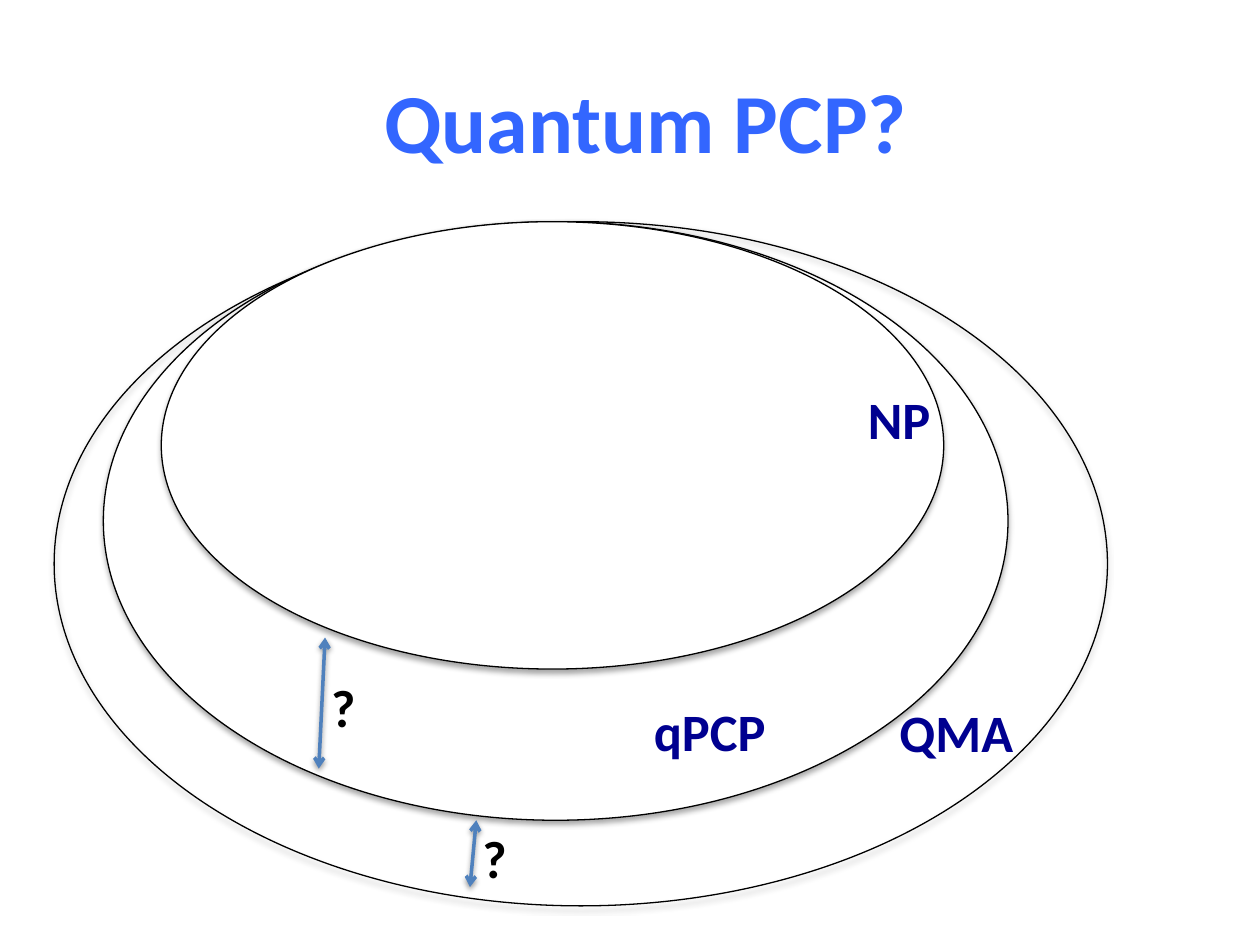
import pptx
import pptx.util
import pptx.dml.color
import pptx.enum.shapes
import pptx.enum.text
import pptx.oxml.ns
from lxml import etree

Inches, Pt = pptx.util.Inches, pptx.util.Pt
qn = pptx.oxml.ns.qn

COLOURS = {"white": "FFFFFF", "black": "000000", "title": "3366FF",
           "label": "000090", "arrow": "4F81BD"}

# Content: nested classes from back to front (left, width, height, fill)
CLASS_TOP = 1.76
CLASSES = [
    (0.82, 7.18, 4.75, "white"),   # qPCP
    (0.43, 8.36, 5.43, None),      # QMA
    (1.28, 6.21, 3.55, "white"),   # NP
]
TITLE = ("Quantum PCP?", (0.17, 0, 9.91, 1.91))
LABEL_SIZE = (1.42, 0.61)
LABELS = [  # text, left, top, colour
    ("NP", 6.79, 3.02, "label"),
    ("QMA", 7.04, 5.51, "label"),
    ("qPCP", 5.09, 5.5, "label"),
    ("?", 2.53, 5.31, "black"),
    ("?", 3.73, 6.51, "black"),
]
GAPS = [  # arrows between the classes: from x, y to x, y
    (2.58, 5.06, 2.53, 6.1),
    (3.78, 6.51, 3.73, 7.04),
]


def rgb(name):
    return pptx.dml.color.RGBColor.from_string(COLOURS[name])


def add_shadow(item, opacity, distance):
    """Soft shadow straight below the item."""
    properties = item._element.spPr
    effects = properties.find(qn("a:effectLst"))
    if effects is None:
        effects = etree.SubElement(properties, qn("a:effectLst"))
    shadow = etree.SubElement(effects, qn("a:outerShdw"), blurRad=str(Pt(3.1)),
                              dist=str(Pt(distance)), dir="5400000", rotWithShape="0")
    colour = etree.SubElement(shadow, qn("a:srgbClr"), val=COLOURS["black"])
    etree.SubElement(colour, qn("a:alpha"), val=str(opacity * 1000))


def add_text(page, text, place, size, colour):
    box = page.shapes.add_textbox(*map(Inches, place))
    frame = box.text_frame
    frame.word_wrap = True
    para = frame.paragraphs[0]
    span = para.add_run()
    span.text = text
    span.font.name = "Calibri"
    span.font.size = Pt(size)
    span.font.bold = True
    span.font.color.rgb = rgb(colour)
    return frame


def add_class(page, left, width, height, fill):
    ellipse = page.shapes.add_shape(pptx.enum.shapes.MSO_SHAPE.OVAL,
                                    *map(Inches, (left, CLASS_TOP, width, height)))
    ellipse.shadow.inherit = False
    if fill:
        ellipse.fill.solid()
        ellipse.fill.fore_color.rgb = rgb(fill)
    else:
        ellipse.fill.background()
    ellipse.line.color.rgb = rgb("black")
    ellipse.line.width = Pt(0.75)
    add_shadow(ellipse, 35, 1.8)


def add_gap(page, ends):
    arrow = page.shapes.add_connector(pptx.enum.shapes.MSO_CONNECTOR.STRAIGHT,
                                      *map(Inches, ends))
    arrow.line.color.rgb = rgb("arrow")
    arrow.line.width = Pt(2)
    outline = arrow.line._get_or_add_ln()
    for end in ("a:headEnd", "a:tailEnd"):
        etree.SubElement(outline, qn(end), type="arrow")
    add_shadow(arrow, 38, 1.6)


def main():
    deck = pptx.Presentation()
    deck.slide_width, deck.slide_height = Inches(10), Inches(7.5)
    page = deck.slides.add_slide(deck.slide_layouts[6])

    # Nested classes
    for shape in CLASSES:
        add_class(page, *shape)

    # Title
    text, place = TITLE
    frame = add_text(page, text, place, 48, "title")
    frame.vertical_anchor = pptx.enum.text.MSO_ANCHOR.MIDDLE
    frame.paragraphs[0].alignment = pptx.enum.text.PP_ALIGN.CENTER

    # Arrows and labels
    for ends in GAPS:
        add_gap(page, ends)
    for text, left, top, colour in LABELS:
        frame = add_text(page, text, (left, top, *LABEL_SIZE), 30, colour)
        frame.auto_size = pptx.enum.text.MSO_AUTO_SIZE.SHAPE_TO_FIT_TEXT

    deck.save("out.pptx")


if __name__ == "__main__":
    main()
